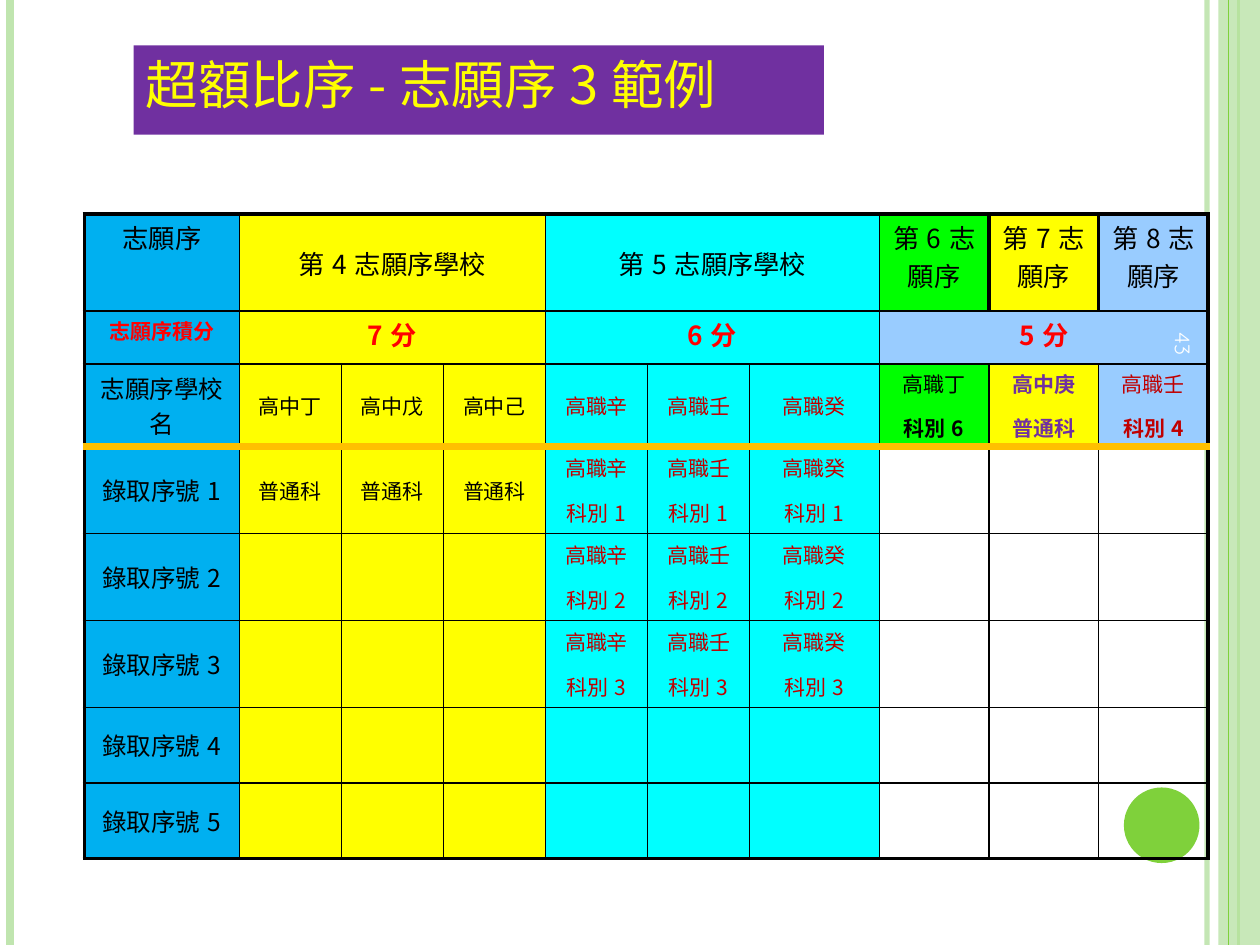
from dataclasses import dataclass
from typing import NamedTuple, Optional

from lxml.etree import SubElement
from pptx import Presentation
from pptx.dml.color import RGBColor
from pptx.enum.shapes import MSO_CONNECTOR as Connector, MSO_SHAPE as Shape
from pptx.enum.text import MSO_ANCHOR as Anchor, PP_ALIGN as Align
from pptx.oxml.ns import qn
from pptx.util import Pt

PX = 9144  # 100 px to the inch


@dataclass(frozen=True)
class Theme:
    font: str = "Noto Sans CJK SC"
    number_font: str = "Quicksand"
    black: str = "000000"
    white: str = "FEFFFF"
    red: str = "FF0000"
    dark_red: str = "C00000"
    purple: str = "7030A0"
    yellow: str = "FFFF00"
    cyan: str = "00FFFF"
    green: str = "00FF00"
    blue: str = "00B0F0"
    pale_blue: str = "99CCFF"
    orange: str = "FFC000"
    accent: str = "7FD13B"
    pale_accent: str = "C0E5AF"
    title: int = 30
    heading: int = 15
    label: int = 14
    body: int = 12


THEME = Theme()


class Stripe(NamedTuple):
    x: int
    color: str
    width: float
    opacity: int = 100


class Entry(NamedTuple):
    """One table cell; each item of lines is a paragraph."""
    lines: tuple = ()
    fill: Optional[str] = None
    size: int = THEME.body
    color: str = THEME.black
    bold: tuple = (False, False)
    anchor: Anchor = Anchor.MIDDLE
    span: int = 1


class Border(NamedTuple):
    width: float = 1
    color: str = THEME.black


THICK = Border(2.25)
DIVIDER = Border(4.5, THEME.orange)
COLUMNS = [123] + [81] * 5 + [103] + [87] * 3
ROWS = [77, 42, 64] + [69] * 3 + [60] * 2


def write(frame, lines, *, size, color, font=THEME.font, align=Align.LEFT,
          bold=(False, False), anchor=None, gap=0) -> None:
    """Fill a text frame, one paragraph per line."""
    if anchor is not None:
        frame.vertical_anchor = anchor
    for index, line in enumerate(lines):
        paragraph = frame.add_paragraph() if index else frame.paragraphs[0]
        paragraph.alignment = align
        if index:
            paragraph.space_before = Pt(gap)
        run = paragraph.add_run()
        run.text = line
        run.font.size = Pt(size)
        run.font.bold = bold[index]
        run.font.name = font
        run.font.color.rgb = RGBColor.from_string(color)
        SubElement(run.font._element, qn("a:ea"), typeface=font)


def set_opacity(fill_parent, percent: int) -> None:
    color = fill_parent.find(qn("a:solidFill"))[0]
    SubElement(color, qn("a:alpha"), val=str(percent * 1000))


def add_stripe(slide, stripe: Stripe, height: int) -> None:
    line = slide.shapes.add_connector(
        Connector.STRAIGHT, stripe.x * PX, 0, stripe.x * PX, height)
    line.line.color.rgb = RGBColor.from_string(stripe.color)
    line.line.width = Pt(stripe.width)
    properties = line._element.spPr
    SubElement(properties, qn("a:effectLst"))
    if stripe.opacity < 100:
        set_opacity(properties.find(qn("a:ln")), stripe.opacity)


def add_block(slide, kind, left: int, top: int, width: int, height: int, color: str):
    shape = slide.shapes.add_shape(kind, left * PX, top * PX, width * PX, height * PX)
    shape.shadow.inherit = False
    shape.fill.solid()
    shape.fill.fore_color.rgb = RGBColor.from_string(color)
    shape.line.fill.background()
    return shape


def row_edge(edge: int) -> Border:
    if edge == 3:
        return DIVIDER
    return THICK if edge in (0, len(ROWS)) else Border()


def column_edge(row: int, edge: int) -> Border:
    outer = edge in (0, len(COLUMNS))
    return THICK if outer or (row == 0 and edge in (8, 9)) else Border()


def set_borders(cell, row: int, column: int, span: int) -> None:
    sides = {"a:lnL": column_edge(row, column), "a:lnR": column_edge(row, column + span),
             "a:lnT": row_edge(row), "a:lnB": row_edge(row + 1)}
    properties = cell._tc.get_or_add_tcPr()
    for tag, border in sides.items():
        line = SubElement(properties, qn(tag), w=str(int(Pt(border.width))))
        fill = SubElement(line, qn("a:solidFill"))
        SubElement(fill, qn("a:srgbClr"), val=border.color)


def table_entries() -> list:
    """Rows of entries; a spanning entry stands for all its columns."""
    t = THEME
    heading = {"size": t.heading}
    top = {"size": t.heading, "anchor": Anchor.TOP}
    score = {"size": t.heading, "color": t.red, "bold": (True,), "anchor": Anchor.TOP, "span": 3}
    vocational = ("高職辛", "高職壬", "高職癸")
    rows = [
        [Entry(("志願序",), t.blue, **top),
         Entry(("第4志願序學校",), t.yellow, span=3, **heading),
         Entry(("第5志願序學校",), t.cyan, span=3, **heading),
         Entry(("第6志願序",), t.green, **top),
         Entry(("第7志願序",), t.yellow, **top),
         Entry(("第8志願序",), t.pale_blue, **top)],
        [Entry(("志願序積分",), t.blue, color=t.red, bold=(True,), anchor=Anchor.TOP),
         Entry(("7分",), t.yellow, **score),
         Entry(("6分",), t.cyan, **score),
         Entry(("5分",), t.pale_blue, **score)],
        [Entry(("志願序學校名",), t.blue, t.label),
         *(Entry((name,), t.yellow) for name in ("高中丁", "高中戊", "高中己")),
         *(Entry((name,), t.cyan, color=t.dark_red) for name in vocational),
         Entry(("高職丁", "科別6"), t.green, bold=(False, True)),
         Entry(("高中庚", "普通科"), t.yellow, color=t.purple, bold=(True, True)),
         Entry(("高職壬", "科別4"), t.pale_blue, color=t.dark_red, bold=(False, True))],
    ]
    for rank in range(1, 6):
        general = ("普通科",) if rank == 1 else ()
        rows.append(
            [Entry((f"錄取序號{rank}",), t.blue, t.label)]
            + [Entry(general, t.yellow)] * 3
            + [Entry((name, f"科別{rank}") if rank <= 3 else (), t.cyan, color=t.dark_red)
               for name in vocational]
            + [Entry()] * 3)
    return rows


def fill_cell(table, row: int, column: int, entry: Entry) -> None:
    cell = table.cell(row, column)
    if entry.span > 1:
        cell.merge(table.cell(row, column + entry.span - 1))
    cell.margin_left = cell.margin_right = 6 * PX
    cell.margin_top = cell.margin_bottom = 3 * PX
    cell.vertical_anchor = entry.anchor
    set_borders(cell, row, column, entry.span)
    if entry.fill:
        cell.fill.solid()
        cell.fill.fore_color.rgb = RGBColor.from_string(entry.fill)
    else:
        cell.fill.background()
    write(cell.text_frame, entry.lines, size=entry.size, color=entry.color,
          bold=entry.bold, align=Align.CENTER, gap=8)


def add_ranking_table(slide) -> None:
    table = slide.shapes.add_table(len(ROWS), len(COLUMNS), 67 * PX, 170 * PX,
                                   sum(COLUMNS) * PX, sum(ROWS) * PX).table
    table.first_row = table.horz_banding = False
    for column, width in zip(table.columns, COLUMNS):
        column.width = width * PX
    for row, height in zip(table.rows, ROWS):
        row.height = height * PX
    for row, entries in enumerate(table_entries()):
        column = 0
        for entry in entries:
            fill_cell(table, row, column, entry)
            column += entry.span


def main() -> None:
    presentation = Presentation()
    presentation.slide_width, presentation.slide_height = 1000 * PX, 750 * PX
    slide = presentation.slides.add_slide(presentation.slide_layouts[6])
    height = presentation.slide_height

    # Side decoration
    for stripe in (Stripe(958, THEME.pale_accent, 3, 93), Stripe(8, THEME.pale_accent, 4.5),
                   Stripe(983, THEME.accent, 1.5)):
        add_stripe(slide, stripe, height)
    band = add_block(slide, Shape.RECTANGLE, 967, 0, 33, 750, THEME.pale_accent)
    set_opacity(band._element.spPr, 87)
    add_stripe(slide, Stripe(975, THEME.accent, 0.75), height)
    add_block(slide, Shape.OVAL, 892, 625, 60, 60, THEME.accent)

    # Table and title
    add_ranking_table(slide)
    title = add_block(slide, Shape.RECTANGLE, 106, 36, 548, 71, THEME.purple)
    write(title.text_frame, ["超額比序-志願序3範例"], size=THEME.title,
          color=THEME.yellow, anchor=Anchor.TOP)

    # Slide number, turned to read downwards
    number = slide.shapes.add_textbox(764 * PX, 409 * PX, 350 * PX, 40 * PX)
    number.rotation = 90
    number.text_frame.word_wrap = True
    write(number.text_frame, ["43"], size=THEME.body, color=THEME.white,
          font=THEME.number_font, anchor=Anchor.MIDDLE)

    presentation.save("out.pptx")


if __name__ == "__main__":
    main()
